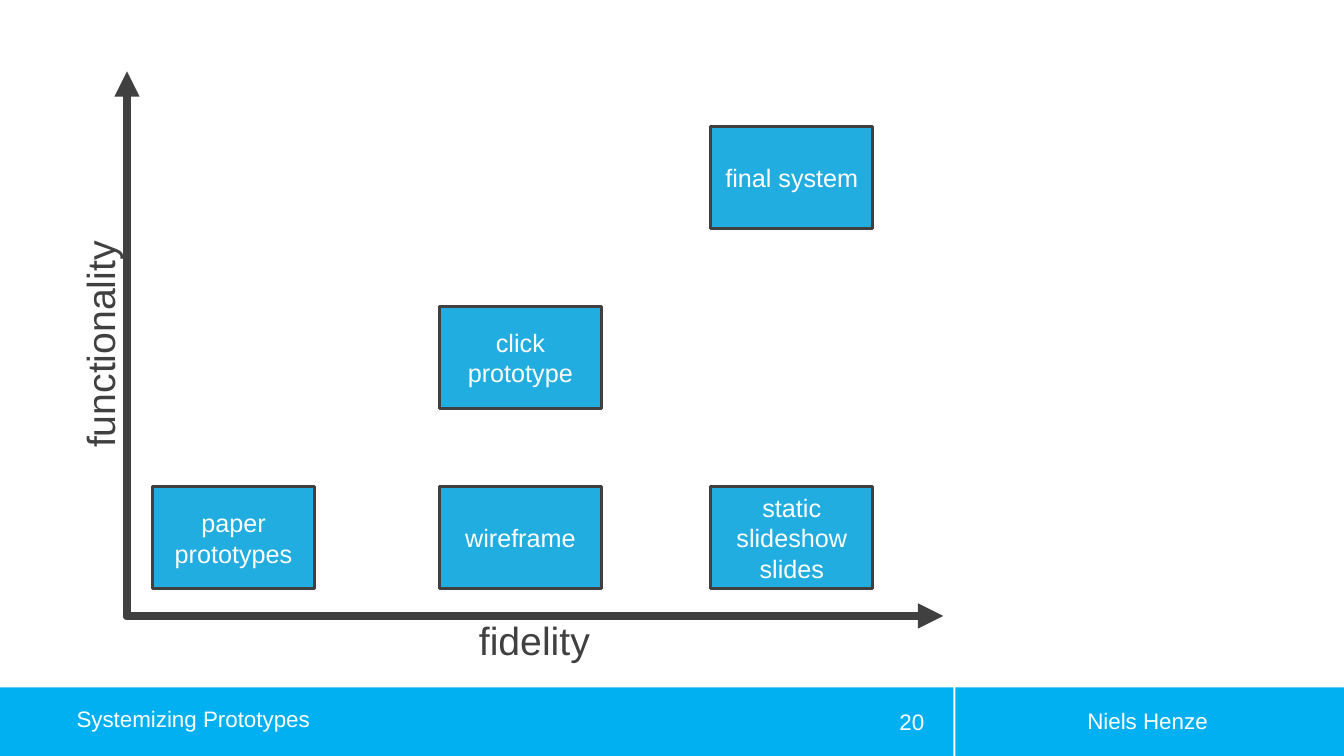
from typing import NamedTuple

from lxml import etree
from pptx import Presentation
from pptx import util as u
from pptx.dml.color import RGBColor
from pptx.enum import shapes, text
from pptx.oxml import ns

WHITE = RGBColor(0xFF, 0xFF, 0xFF)
DARK_GREY = RGBColor(0x40, 0x40, 0x40)
BOX_BLUE = RGBColor(0x21, 0xAD, 0xDF)
FOOTER_BLUE = RGBColor(0x00, 0xB0, 0xF0)
FONT = "Arial"

SLIDE_WIDTH, SLIDE_HEIGHT = 33.87, 19.05
FOOTER_TOP, FOOTER_HEIGHT = 17.32, 1.73
ORIGIN = (3.2, 15.52)
BOX_WIDTH, BOX_HEIGHT = 4.09, 2.57
FIDELITY_LEFTS = (3.84, 11.07, 17.91)
LOWEST_BOX_TOP, FUNCTIONALITY_STEP = 12.27, 4.54

LEFT, CENTER, RIGHT = text.PP_ALIGN.LEFT, text.PP_ALIGN.CENTER, text.PP_ALIGN.RIGHT


class Prototype(NamedTuple):
    name: str
    fidelity: int
    functionality: int


class Label(NamedTuple):
    words: str
    left: float
    top: float
    width: float
    height: float
    size: int
    color: RGBColor
    align: text.PP_ALIGN = LEFT
    anchor: text.MSO_ANCHOR = text.MSO_ANCHOR.MIDDLE
    inset: bool = True
    wrap: bool = True
    rotation: int = 0
    line_spacing: float = 1.0


PROTOTYPES = (
    Prototype("paper prototypes", 0, 0),
    Prototype("wireframe", 1, 0),
    Prototype("click prototype", 1, 1),
    Prototype("final system", 2, 2),
    Prototype("static slideshow slides", 2, 0),
)

TOP = text.MSO_ANCHOR.TOP
LABELS = (
    Label("Niels Henze", 24.41, 17.65, 9.02, 1.02, 16, WHITE, CENTER),
    Label("20", 21.36, 17.68, 2.18, 1.02, 16, WHITE, RIGHT),
    Label("Systemizing Prototypes", 1.93, 17.65, 15.6, 1.02, 16, WHITE,
          inset=False, line_spacing=0.9),
    Label("functionality", -0.13, 8.05, 5.28, 1.19, 28, DARK_GREY,
          anchor=TOP, inset=False, wrap=False, rotation=270),
    Label("fidelity", 12.07, 15.52, 2.82, 1.19, 28, DARK_GREY,
          anchor=TOP, inset=False, wrap=False),
)


def write(paragraph, words: str, size: int, color: RGBColor, align: text.PP_ALIGN) -> None:
    paragraph.alignment = align
    run = paragraph.add_run()
    run.text = words
    run.font.name = FONT
    run.font.size = u.Pt(size)
    run.font.color.rgb = color


def add_rectangle(slide, left: float, top: float, width: float, height: float, fill: RGBColor):
    shape = slide.shapes.add_shape(
        shapes.MSO_SHAPE.RECTANGLE, u.Cm(left), u.Cm(top), u.Cm(width), u.Cm(height))
    shape.shadow.inherit = False
    shape.fill.solid()
    shape.fill.fore_color.rgb = fill
    shape.line.fill.background()
    return shape


def add_axis(slide, end_x: float, end_y: float) -> None:
    axis = slide.shapes.add_connector(
        shapes.MSO_CONNECTOR.STRAIGHT, *map(u.Cm, ORIGIN), u.Cm(end_x), u.Cm(end_y))
    axis.line.color.rgb = DARK_GREY
    axis.line.width = u.Pt(6)
    properties = axis.element.spPr
    line = properties.find(ns.qn("a:ln"))
    line.set("cap", "rnd")
    etree.SubElement(line, ns.qn("a:round"))
    etree.SubElement(line, ns.qn("a:tailEnd"), type="triangle")
    etree.SubElement(properties, ns.qn("a:effectLst"))


def add_prototype(slide, prototype: Prototype) -> None:
    top = LOWEST_BOX_TOP - prototype.functionality * FUNCTIONALITY_STEP
    box = add_rectangle(slide, FIDELITY_LEFTS[prototype.fidelity], top,
                        BOX_WIDTH, BOX_HEIGHT, BOX_BLUE)
    box.line.color.rgb = DARK_GREY
    box.line.width = u.Pt(2.25)
    box.text_frame.word_wrap = True
    box.text_frame.vertical_anchor = text.MSO_ANCHOR.MIDDLE
    write(box.text_frame.paragraphs[0], prototype.name, 18, WHITE, CENTER)


def add_label(slide, label: Label) -> None:
    shape = slide.shapes.add_textbox(
        u.Cm(label.left), u.Cm(label.top), u.Cm(label.width), u.Cm(label.height))
    shape.rotation = label.rotation
    frame = shape.text_frame
    frame.word_wrap = label.wrap
    frame.vertical_anchor = label.anchor
    if not label.wrap:
        frame.auto_size = text.MSO_AUTO_SIZE.SHAPE_TO_FIT_TEXT
    if not label.inset:
        frame.margin_left = frame.margin_right = 0
        frame.margin_top = frame.margin_bottom = 0
    paragraph = frame.paragraphs[0]
    paragraph.line_spacing = label.line_spacing
    write(paragraph, label.words, label.size, label.color, label.align)


def main() -> None:
    presentation = Presentation()
    presentation.slide_width = u.Cm(SLIDE_WIDTH)
    presentation.slide_height = u.Cm(SLIDE_HEIGHT)
    slide = presentation.slides.add_slide(presentation.slide_layouts[6])

    # Footer bars
    for left, width in ((24.08, 9.79), (0, 24.03)):
        add_rectangle(slide, left, FOOTER_TOP, width, FOOTER_HEIGHT, FOOTER_BLUE)

    # Axes: fidelity, then functionality
    add_axis(slide, 23.77, ORIGIN[1])
    add_axis(slide, ORIGIN[0], 1.8)

    # Footer texts and axis titles
    for label in LABELS:
        add_label(slide, label)

    # Prototypes placed by fidelity and functionality
    for prototype in PROTOTYPES:
        add_prototype(slide, prototype)

    presentation.save("out.pptx")


if __name__ == "__main__":
    main()
